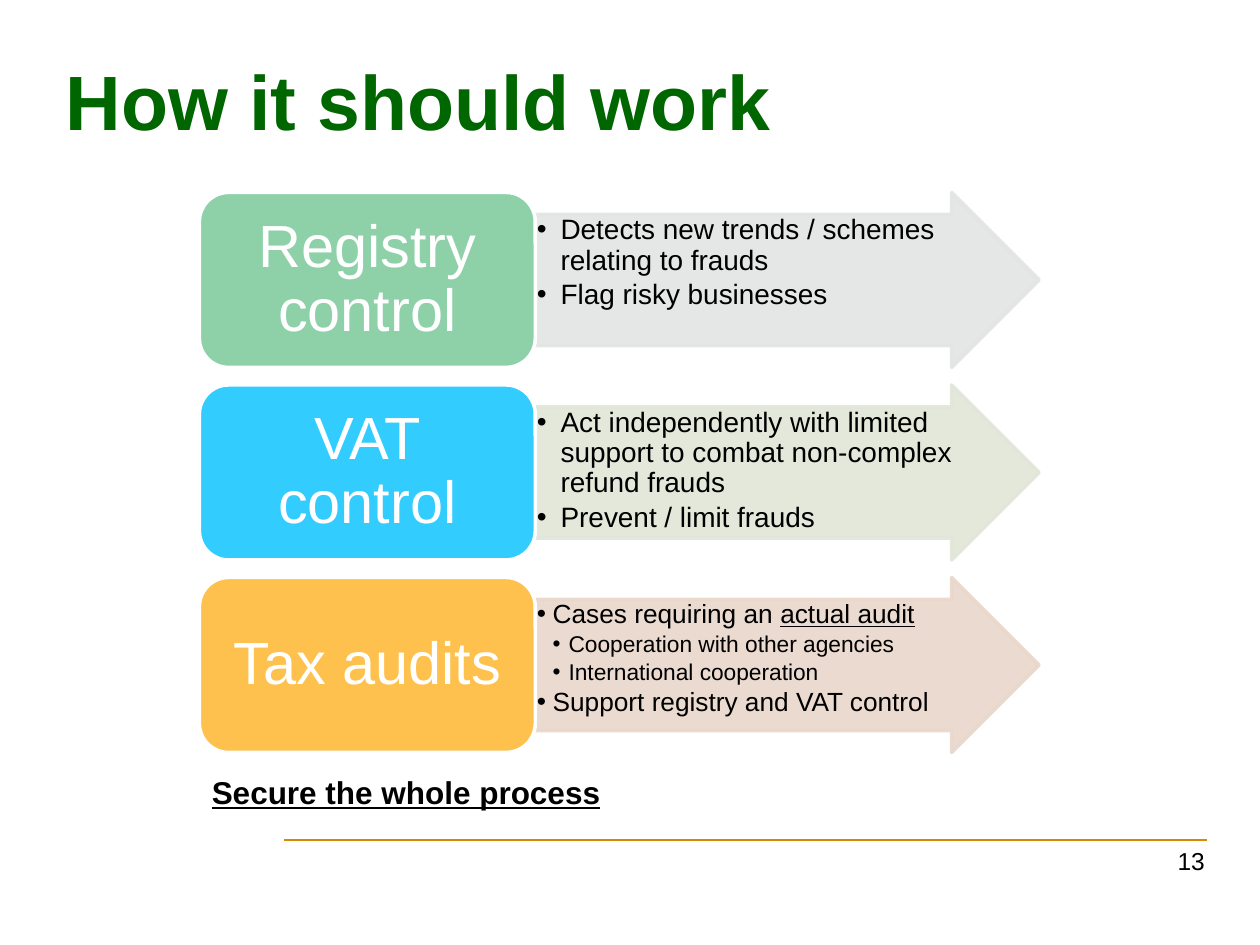
from collections import namedtuple

from lxml import etree
from pptx import Presentation
from pptx.dml.color import RGBColor
from pptx.enum.shapes import MSO_CONNECTOR, MSO_SHAPE
from pptx.enum.text import MSO_ANCHOR, PP_ALIGN
from pptx.oxml.ns import qn
from pptx.util import Cm, Pt

ARROW, ROUNDED = MSO_SHAPE.RIGHT_ARROW, MSO_SHAPE.ROUNDED_RECTANGLE
STRAIGHT = MSO_CONNECTOR.STRAIGHT
TOP, MIDDLE = MSO_ANCHOR.TOP, MSO_ANCHOR.MIDDLE
LEFT, CENTER, RIGHT = PP_ALIGN.LEFT, PP_ALIGN.CENTER, PP_ALIGN.RIGHT
FONT = "Arial"

Box = namedtuple("Box", "left top width height")
Bullet = namedtuple("Bullet", "runs size margin hanging")
Row = namedtuple("Row", "label label_color arrow_color bullets")

ROWS = [
    Row("Registry control", "8ED1A9", "E2E5E3", [
        Bullet([("Detects new trends / schemes relating to frauds", False)], 16, 0.48, 0.48),
        Bullet([("Flag risky businesses", False)], 16, 0.48, 0.48),
    ]),
    Row("VAT control", "33CCFF", "E0E6D8", [
        Bullet([("Act independently with limited support to combat "
                 "non-complex refund frauds", False)], 16, 0.48, 0.48),
        Bullet([("Prevent / limit frauds", False)], 16, 0.48, 0.48),
    ]),
    Row("Tax audits", "FFC14D", "E9D7CB", [
        Bullet([("Cases requiring an ", False), ("actual audit", True)], 15, 0.32, 0.32),
        Bullet([("Cooperation with other agencies", False)], 13, 0.64, 0.32),
        Bullet([("International cooperation", False)], 13, 0.64, 0.32),
        Bullet([("Support registry and VAT control", False)], 15, 0.32, 0.32),
    ]),
]


def rgb(color):
    """Turn a hex string into a colour."""
    return RGBColor.from_string(color)


def add_run(para, text, size, color="000000", bold=False, underline=False):
    """Append one formatted run to a paragraph."""
    span = para.add_run()
    span.text = text
    font = span.font
    font.name, font.size, font.bold, font.underline = FONT, Pt(size), bold, underline
    font.color.rgb = rgb(color)


def set_frame(frame, anchor, insets):
    """Set wrapping, anchor and the left, top, right and bottom insets."""
    frame.word_wrap = True
    frame.vertical_anchor = anchor
    frame.margin_left, frame.margin_top, frame.margin_right, frame.margin_bottom = map(Cm, insets)


def add_text(page, box, text, size, align=LEFT, anchor=TOP, **style):
    """Place a single-paragraph text box."""
    frame = page.shapes.add_textbox(*map(Cm, box)).text_frame
    set_frame(frame, anchor, (0.25, 0.13, 0.25, 0.13))
    para = frame.paragraphs[0]
    para.alignment = align
    add_run(para, text, size, **style)


def add_filled_shape(page, kind, box, fill, line):
    """Place a preset shape with a solid fill and a 2 pt outline."""
    shape = page.shapes.add_shape(kind, *map(Cm, box))
    shape.shadow.inherit = False
    shape.fill.solid()
    shape.fill.fore_color.rgb = rgb(fill)
    shape.line.color.rgb = rgb(line)
    shape.line.width = Pt(2)
    return shape


def set_opacity(shape, percent):
    """Make the fill and outline of a shape partly transparent."""
    for color in shape.element.spPr.iter(qn("a:srgbClr")):
        etree.SubElement(color, qn("a:alpha")).set("val", str(percent * 1000))


def add_bullet(para, bullet):
    """Fill a paragraph with one hanging bullet point."""
    para.alignment = LEFT
    para.line_spacing = 0.9
    para.space_after = Pt(bullet.size * 0.15)
    properties = para._p.get_or_add_pPr()
    properties.set("marL", str(Cm(bullet.margin)))
    properties.set("indent", str(-Cm(bullet.hanging)))
    etree.SubElement(properties, qn("a:buFont")).set("typeface", FONT)
    etree.SubElement(properties, qn("a:buChar")).set("char", "•")
    for text, underline in bullet.runs:
        add_run(para, text, bullet.size, underline=underline)


def add_row(page, box, row):
    """Place a rounded label followed by an arrow with bullet points."""
    label_width = box.width * 0.4
    arrow_box = Box(box.left + label_width, box.top, box.width - label_width, box.height)
    arrow = add_filled_shape(page, ARROW, arrow_box, row.arrow_color, row.arrow_color)
    arrow.adjustments[0], arrow.adjustments[1] = 0.75, 0.5
    set_opacity(arrow, 90)
    frame = arrow.text_frame
    set_frame(frame, TOP, (0.03, 0.03, 0.03, 0.03))
    for index, bullet in enumerate(row.bullets):
        add_bullet(frame.add_paragraph() if index else frame.paragraphs[0], bullet)

    label = add_filled_shape(page, ROUNDED, box._replace(width=label_width),
                             row.label_color, "FFFFFF")
    set_frame(label.text_frame, MIDDLE, (0.36, 0.18, 0.36, 0.18))
    para = label.text_frame.paragraphs[0]
    para.alignment = CENTER
    para.line_spacing = 0.9
    add_run(para, row.label, 34, "FFFFFF")


def add_rows(page, box):
    """Stack the rows in a box with gaps of a tenth of a row height."""
    height = box.height / (len(ROWS) * 1.1 - 0.1)
    for index, row in enumerate(ROWS):
        top = box.top + index * height * 1.1
        add_row(page, Box(box.left, top, box.width, height), row)


def add_footer(page, box):
    """Place the rule and the page number below it."""
    right = box.left + box.width
    rule = page.shapes.add_connector(STRAIGHT, *map(Cm, (box.left, box.top, right, box.top)))
    rule.line.color.rgb = rgb("D58B00")
    rule.line.width = Pt(1.5)
    etree.SubElement(rule.element.spPr, qn("a:effectLst"))
    add_text(page, Box(right - 5.08, box.top, 5.28, box.height), "13", 14, RIGHT)


def main():
    """Build the slide and save the deck."""
    deck = Presentation()
    deck.slide_width, deck.slide_height = Cm(25.4), Cm(19.05)
    page = deck.slides.add_slide(deck.slide_layouts[6])
    add_footer(page, Box(5.72, 16.93, 18.62, 1.27))
    add_text(page, Box(1.07, 0.42, 21.59, 3.18), "How it should work", 44,
             anchor=MIDDLE, color="006600", bold=True)
    add_rows(page, Box(4.02, 3.88, 16.93, 11.29))
    add_text(page, Box(4.02, 15.45, 8.46, 1.06), "Secure the whole process", 18,
             bold=True, underline=True)
    deck.save("out.pptx")


if __name__ == "__main__":
    main()
